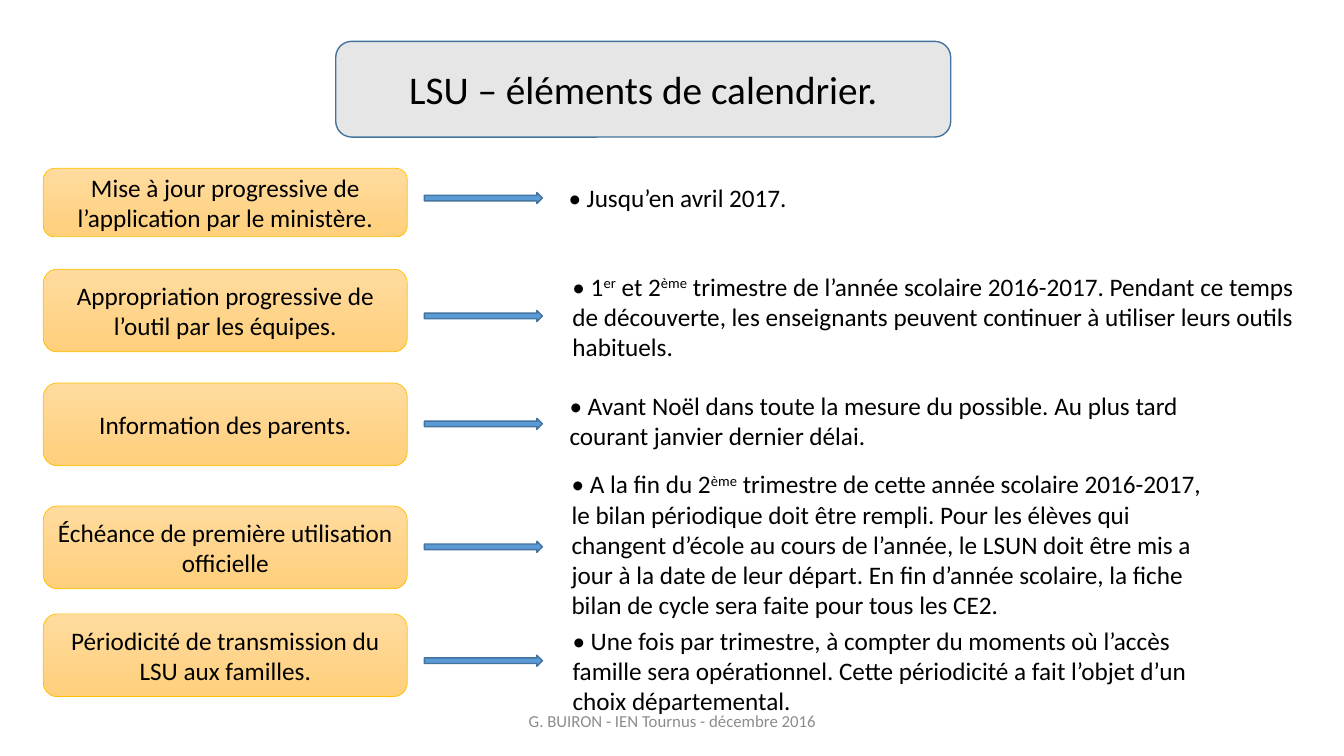
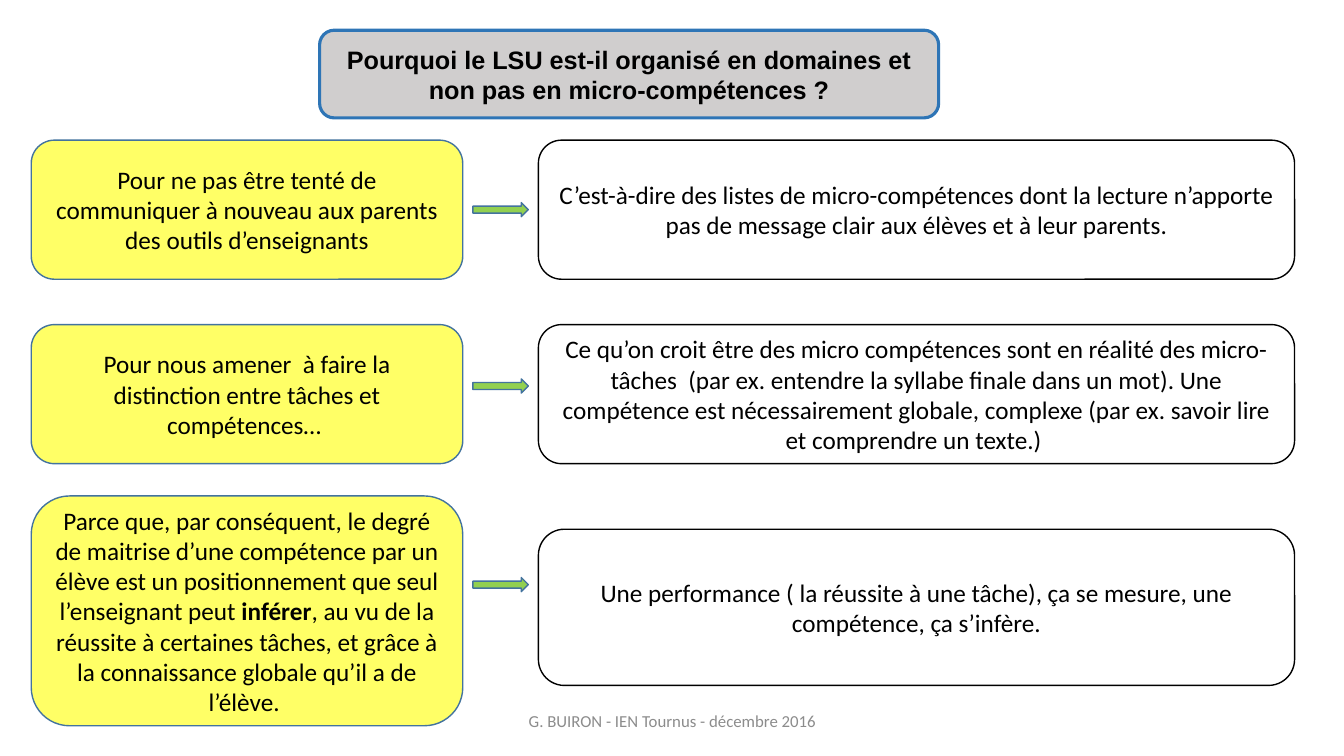
"""Build two slides on the LSU: its calendar and why it is organised in domains."""
from dataclasses import dataclass

from pptx import Presentation
from pptx.dml.color import RGBColor
from pptx.enum.shapes import MSO_SHAPE as Preset
from pptx.enum.text import MSO_ANCHOR as Anchor, MSO_AUTO_SIZE as AutoSize, PP_ALIGN as Align
from pptx.shapes.autoshape import Shape
from pptx.slide import Slide
from pptx.util import Inches, Pt

COLOURS = {
    "text": "000000",
    "footer": "8C8C8C",
    "outline": "43739E",
    "calendar_title": "E7E6E6",
    "domain_title": "D0CECE",
    "domain_title_line": "2E75B6",
    "step_top": "FFDB9E",
    "step_bottom": "FFD07C",
    "step_line": "FFC000",
    "step_arrow": "5B9BD5",
    "reason": "FFFF66",
    "reason_arrow": "92D050",
    "answer": "FFFFFF",
    "answer_line": "000000",
}
FOOTER = "G. BUIRON - IEN Tournus - décembre 2016"


@dataclass(frozen=True)
class Box:
    left: float
    top: float
    width: float
    height: float

    def lengths(self) -> list[int]:
        return [Inches(side) for side in (self.left, self.top, self.width, self.height)]


@dataclass(frozen=True)
class Step:
    label: str
    top: float
    height: float
    arrow_top: float
    note: str
    note_box: Box


@dataclass(frozen=True)
class Reason:
    label: str
    top: float
    height: float
    arrow_top: float
    answer: str
    answer_top: float
    answer_height: float


STEPS = [
    Step("Mise à jour progressive de l’application par le ministère.", 1.67, 0.68, 1.91,
         "• Jusqu’en avril 2017.", Box(5.54, 1.76, 6.59, 0.4)),
    Step("Appropriation progressive de l’outil par les équipes.", 2.67, 0.82, 3.08,
         "• 1|er| et 2|ème| trimestre de l’année scolaire 2016-2017. Pendant ce temps de "
         "découverte, les enseignants peuvent continuer à utiliser leurs outils habituels.",
         Box(5.58, 2.64, 7.46, 1.01)),
    Step("Information des parents.", 3.8, 0.82, 4.15,
         "• Avant Noël dans toute la mesure du possible. Au plus tard courant janvier "
         "dernier délai.", Box(5.55, 3.82, 6.59, 0.71)),
    Step("Échéance de première utilisation officielle", 5.02, 0.82, 5.37,
         "• A la fin du 2|ème| trimestre de cette année scolaire 2016-2017, le bilan "
         "périodique doit être rempli. Pour les élèves qui changent d’école au cours de "
         "l’année, le LSUN doit être mis a jour à la date de leur départ. En fin d’année "
         "scolaire, la fiche bilan de cycle sera faite pour tous les CE2.",
         Box(5.57, 4.6, 6.59, 1.62)),
    Step("Périodicité de transmission du LSU aux familles.", 6.09, 0.82, 6.5,
         "• Une fois par trimestre, à compter du moments où l’accès famille sera "
         "opérationnel. Cette périodicité a fait l’objet d’un choix départemental.",
         Box(5.58, 6.15, 6.59, 1.01)),
]

REASONS = [
    Reason("Pour ne pas être tenté de communiquer à nouveau aux parents des outils "
           "d’enseignants", 1.39, 1.38, 2.01,
           "C’est-à-dire des listes de micro-compétences dont la lecture n’apporte pas de "
           "message clair aux élèves et à leur parents.", 1.39, 1.38),
    Reason("Pour nous amener  à faire la distinction entre tâches et compétences… ",
           3.22, 1.38, 3.76,
           "Ce qu’on croit être des micro compétences sont en réalité des micro-tâches  "
           "(par ex. entendre la syllabe finale dans un mot). Une compétence est "
           "nécessairement globale, complexe (par ex. savoir lire et comprendre un texte.) ",
           3.22, 1.38),
    Reason("Parce que, par conséquent, le degré de maitrise d’une compétence par un élève "
           "est un positionnement que seul l’enseignant peut |inférer|, au vu de la réussite "
           "à certaines tâches, et grâce à la connaissance globale qu’il a de l’élève. ",
           4.92, 2.28, 5.73,
           "Une performance ( la réussite à une tâche), ça se mesure, une compétence, ça "
           "s’infère.", 5.25, 1.55),
]


def rgb(name: str) -> RGBColor:
    return RGBColor.from_string(COLOURS[name])


def write(shape: Shape, text: str, *, size: float = 18, font: str = "Calibri",
          colour: str = "text", bold: bool = False, align: Align = Align.CENTER,
          anchor: Anchor = Anchor.MIDDLE, raised: bool = False) -> None:
    """Write text whose parts between bars are raised, or else bold."""
    frame = shape.text_frame
    frame.word_wrap = True
    frame.vertical_anchor = anchor
    paragraph = frame.paragraphs[0]
    paragraph.alignment = align
    for index, part in enumerate(text.split("|")):
        marked = index % 2 == 1
        run = paragraph.add_run()
        run.text = part
        run.font.size = Pt(size)
        run.font.name = font
        run.font.color.rgb = rgb(colour)
        run.font.bold = bold or (marked and not raised)
        if marked and raised:
            run._r.get_or_add_rPr().set("baseline", "30000")


def add_preset(slide: Slide, preset: Preset, box: Box, fill: str, line: str = "outline",
               line_width: float = 1, fade_to: str | None = None) -> Shape:
    """Draw a preset shape with a plain fill, or a downward fade."""
    shape = slide.shapes.add_shape(preset, *box.lengths())
    shape.shadow.inherit = False
    if fade_to:
        shape.fill.gradient()
        shape.fill.gradient_angle = 270
        for stop, name in zip(shape.fill.gradient_stops, (fill, fade_to)):
            stop.color.rgb = rgb(name)
    else:
        shape.fill.solid()
        shape.fill.fore_color.rgb = rgb(fill)
    shape.line.color.rgb = rgb(line)
    shape.line.width = Pt(line_width)
    return shape


def add_footed_slide(deck: Presentation) -> Slide:
    """Add a blank slide with the shared footer."""
    slide = deck.slides.add_slide(deck.slide_layouts[6])
    footer = slide.shapes.add_textbox(*Box(4.42, 6.95, 4.5, 0.4).lengths())
    write(footer, FOOTER, size=12, colour="footer")
    return slide


def add_step(slide: Slide, step: Step) -> None:
    """Draw a calendar step, its arrow and its note."""
    label = add_preset(slide, Preset.ROUNDED_RECTANGLE, Box(0.43, step.top, 3.61, step.height),
                       "step_top", "step_line", 0.5, fade_to="step_bottom")
    write(label, step.label)
    add_preset(slide, Preset.RIGHT_ARROW, Box(4.21, step.arrow_top, 1.17, 0.11), "step_arrow")
    note = slide.shapes.add_textbox(*step.note_box.lengths())
    write(note, step.note, align=Align.LEFT, anchor=Anchor.TOP, raised=True)
    note.text_frame.auto_size = AutoSize.SHAPE_TO_FIT_TEXT


def add_reason(slide: Slide, reason: Reason) -> None:
    """Draw a reason, its arrow and its answer."""
    label = add_preset(slide, Preset.ROUNDED_RECTANGLE,
                       Box(0.31, reason.top, 4.28, reason.height), "reason")
    write(label, reason.label)
    add_preset(slide, Preset.RIGHT_ARROW, Box(4.69, reason.arrow_top, 0.55, 0.14),
               "reason_arrow")
    answer = add_preset(slide, Preset.ROUNDED_RECTANGLE,
                        Box(5.34, reason.answer_top, 7.5, reason.answer_height),
                        "answer", "answer_line")
    write(answer, reason.answer)


def main() -> None:
    """Build and save the deck."""
    deck = Presentation()
    deck.slide_width, deck.slide_height = Inches(13.33), Inches(7.5)

    calendar = add_footed_slide(deck)
    calendar_title = add_preset(calendar, Preset.ROUNDED_RECTANGLE, Box(3.33, 0.41, 6.1, 0.95),
                                "calendar_title")
    write(calendar_title, "LSU – éléments de calendrier.", size=28)
    for step in STEPS:
        add_step(calendar, step)

    domains = add_footed_slide(deck)
    domain_title = add_preset(domains, Preset.ROUNDED_RECTANGLE, Box(3.17, 0.3, 6.14, 0.87),
                              "domain_title", "domain_title_line", 2.25)
    write(domain_title, "Pourquoi le LSU est-il organisé en domaines et non pas en "
          "micro-compétences ?", font="Arial", bold=True)
    for reason in REASONS:
        add_reason(domains, reason)

    deck.save("out.pptx")


if __name__ == "__main__":
    main()
